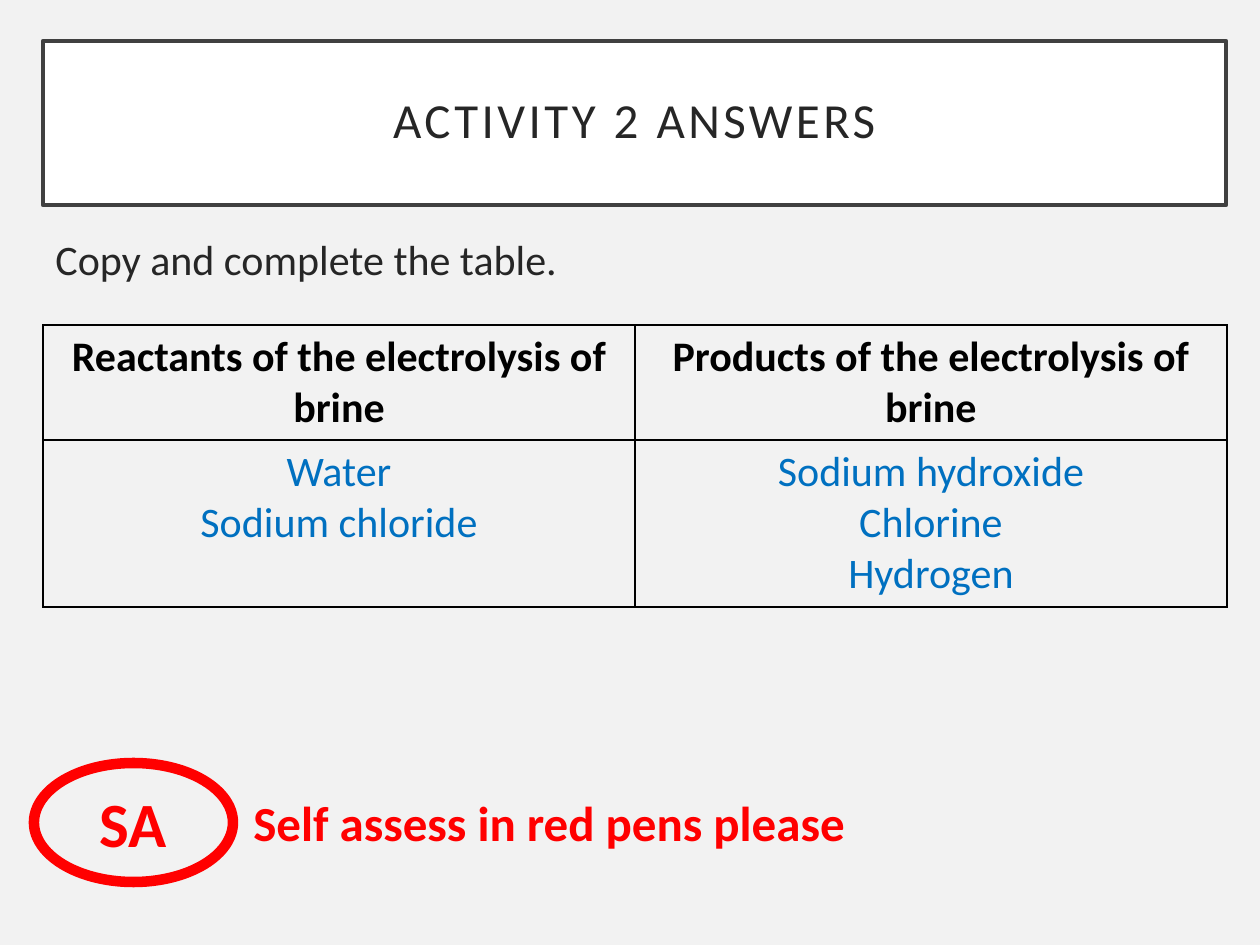
import pptx
import pptx.dml.color
import pptx.enum.shapes
import pptx.enum.text
import pptx.oxml
import pptx.oxml.ns
import pptx.util

PX = 914400 / 126
FONT = "Calibri"
COLORS = {"background": "F2F2F2", "white": "FFFFFF", "frame": "404040", "text": "262626",
          "black": "000000", "answer": "0070C0", "red": "FF0000"}
ALIGN = pptx.enum.text.PP_ALIGN
MIDDLE = pptx.enum.text.MSO_ANCHOR.MIDDLE


def box(*lengths):
    """Turn px lengths into EMU."""
    return [pptx.util.Emu(round(length * PX)) for length in lengths]


def write(text_frame, text, size, color, bold=False, align=ALIGN.CENTER):
    text_frame.word_wrap = True
    text_frame.text = text
    for paragraph in text_frame.paragraphs:
        paragraph.alignment = align
        for run in paragraph.runs:
            run.font.name = FONT
            run.font.size = pptx.util.Pt(size)
            run.font.bold = bold
            run.font.color.rgb = pptx.dml.color.RGBColor.from_string(COLORS[color])


rgb = pptx.dml.color.RGBColor.from_string
presentation = pptx.Presentation()
presentation.slide_width, presentation.slide_height = box(1260, 945)
slide = presentation.slides.add_slide(presentation.slide_layouts[5])
slide.background.fill.solid()
slide.background.fill.fore_color.rgb = rgb(COLORS["background"])

# Title
title = slide.shapes.title
title.left, title.top, title.width, title.height = box(43, 41, 1183, 164)
title.fill.solid()
title.fill.fore_color.rgb = rgb(COLORS["white"])
title.line.color.rgb = rgb(COLORS["frame"])
title.line.width = pptx.util.Pt(2.5)
write(title.text_frame, "ACTIVITY 2 ANSWERS", 28, "text")
title.text_frame.vertical_anchor = MIDDLE
title.text_frame.paragraphs[0].line_spacing = 0.9
title.text_frame.paragraphs[0].runs[0].font._element.set("spc", "200")

# Instruction
instruction = slide.shapes.add_textbox(*box(43, 227, 1184, 80))
write(instruction.text_frame, "Copy and complete the table.", 24, "text", align=ALIGN.LEFT)
instruction.text_frame.paragraphs[0].space_before = pptx.util.Pt(10)

# Answer table
rows = [
    ["Reactants of the electrolysis of brine", "Products of the electrolysis of brine"],
    ["Water\nSodium chloride", "Sodium hydroxide\nChlorine\nHydrogen"],
]
table = slide.shapes.add_table(2, 2, *box(43, 325, 1184, 282)).table
for row, height in zip(table.rows, box(115, 167)):
    row.height = height
for row_index, texts in enumerate(rows):
    is_header = row_index == 0
    for column_index, text in enumerate(texts):
        cell = table.cell(row_index, column_index)
        write(cell.text_frame, text, 24, "black" if is_header else "answer", is_header)
        properties = cell._tc.get_or_add_tcPr()
        for side in ("lnL", "lnR", "lnT", "lnB"):
            properties.append(pptx.oxml.parse_xml(
                f'<a:{side} {pptx.oxml.ns.nsdecls("a")} w="12700"><a:solidFill>'
                f'<a:srgbClr val="{COLORS["black"]}"/></a:solidFill></a:{side}>'))
        cell.fill.background()

# Self-assessment badge and prompt
badge = slide.shapes.add_shape(pptx.enum.shapes.MSO_SHAPE.OVAL, *box(34, 763, 199, 119))
badge.shadow.inherit = False
badge.fill.background()
badge.line.color.rgb = rgb(COLORS["red"])
badge.line.width = pptx.util.Pt(6)
write(badge.text_frame, "SA", 36, "red", bold=True)
badge.text_frame.vertical_anchor = MIDDLE

prompt = slide.shapes.add_textbox(*box(241, 786, 708, 72))
write(prompt.text_frame, "Self assess in red pens please", 28, "red", bold=True, align=ALIGN.LEFT)

presentation.save("out.pptx")
